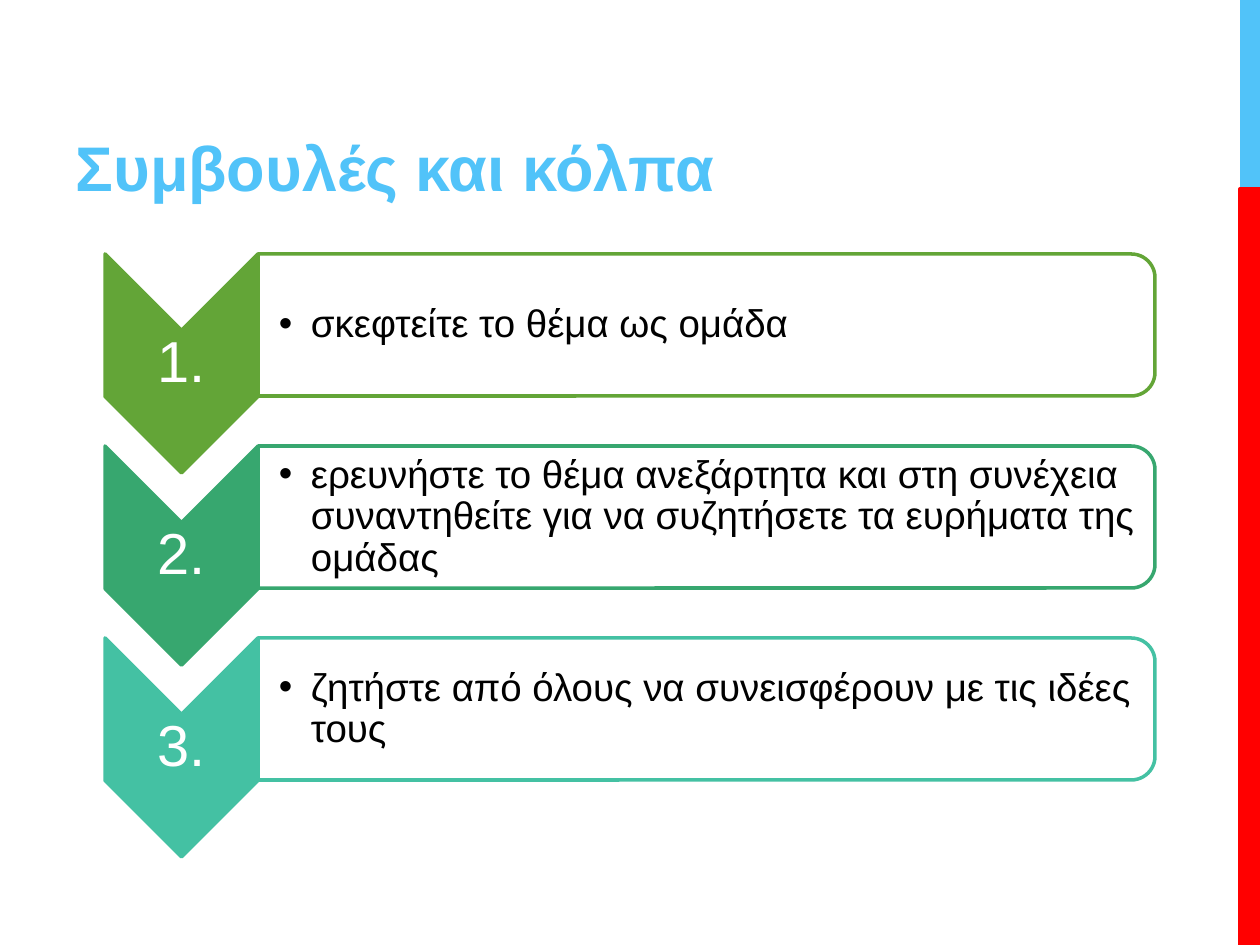
"""Build the slide with three numbered tips as chevrons beside rounded panels."""
from dataclasses import dataclass

from lxml.etree import SubElement
from pptx import Presentation
from pptx.dml.color import RGBColor
from pptx.enum.shapes import MSO_SHAPE
from pptx.enum.text import MSO_ANCHOR, MSO_AUTO_SIZE, PP_ALIGN
from pptx.oxml.ns import qn
from pptx.util import Pt

TITLE = "Συμβουλές και κόλπα"
TIPS = [
    ("1.", "σκεφτείτε το θέμα ως ομάδα", "63A537"),
    ("2.", "ερευνήστε το θέμα ανεξάρτητα και στη συνέχεια συναντηθείτε "
           "για να συζητήσετε τα ευρήματα της ομάδας", "37A76F"),
    ("3.", "ζητήστε από όλους να συνεισφέρουν με τις ιδέες τους", "44C1A3"),
]


@dataclass(frozen=True)
class Theme:
    font: str = "Arial"
    accent: str = "51C3F9"
    band: str = "FF0000"
    light: str = "FFFFFF"
    dark: str = "000000"
    title_size: int = 36
    number_size: int = 33
    tip_size: int = 22
    outline: float = 2
    band_outline: float = 2.25


THEME = Theme()
SLIDE_W, SLIDE_H = 1260, 945
BAND_X, BAND_SPLIT = 1240, 189
TITLE_BOX = (63, 21, 885, 189)
FIRST_TOP, PITCH = 254, 192
CHEVRON_X, CHEVRON_W, CHEVRON_H = 105, 153, 219
PANEL_X, PANEL_W, PANEL_H = 258, 897, 142
NUMBER_DROP, NUMBER_H = 77, 66
TIP_DROP, TIP_W, TIP_H = 7, 890, 129
INSET, TIP_INSET, BULLET_INDENT = 3, 21, 32


def px(length):
    return round(length * 914400 / 126)


def add_block(slide, kind, box, fill, line=None, width=THEME.outline, turned=False):
    x, y, w, h = box
    if turned:
        x, y, w, h = x + (w - h) / 2, y + (h - w) / 2, h, w
    block = slide.shapes.add_shape(kind, px(x), px(y), px(w), px(h))
    block.shadow.inherit = False
    block.rotation = 90 if turned else 0
    block.fill.solid()
    block.fill.fore_color.rgb = RGBColor.from_string(fill)
    if line:
        block.line.color.rgb = RGBColor.from_string(line)
        block.line.width = Pt(width)
    else:
        block.line.fill.background()
    return block


def style(paragraph, size, color, bold=False):
    font = paragraph.font if not paragraph.runs else paragraph.runs[0].font
    font.name, font.size, font.bold = THEME.font, Pt(size), bold
    font.color.rgb = RGBColor.from_string(color)


def add_label(slide, box, text, size, color, left_inset=INSET):
    frame = slide.shapes.add_textbox(*map(px, box)).text_frame
    frame.word_wrap = True
    frame.vertical_anchor = MSO_ANCHOR.MIDDLE
    frame.margin_left = px(left_inset)
    frame.margin_right = frame.margin_top = frame.margin_bottom = px(INSET)
    frame.text = text
    label = frame.paragraphs[0]
    label.line_spacing = 0.9
    style(label, size, color)
    return label


def add_bullet(paragraph):
    properties = paragraph._p.get_or_add_pPr()
    properties.set("marL", str(px(BULLET_INDENT)))
    properties.set("indent", str(-px(BULLET_INDENT)))
    bullet_color = SubElement(properties, qn("a:buClr"))
    SubElement(bullet_color, qn("a:srgbClr"), val=THEME.dark)
    SubElement(properties, qn("a:buFont"), typeface=THEME.font)
    SubElement(properties, qn("a:buChar"), char="•")


def add_title(slide):
    title = slide.shapes.title
    title.left, title.top, title.width, title.height = map(px, TITLE_BOX)
    frame = title.text_frame
    frame.text = TITLE
    frame.auto_size = MSO_AUTO_SIZE.NONE
    frame.vertical_anchor = MSO_ANCHOR.BOTTOM
    heading = frame.paragraphs[0]
    heading.alignment = PP_ALIGN.LEFT
    style(heading, THEME.title_size, THEME.accent, bold=True)


def add_tip(slide, top, number, tip, color):
    add_block(slide, MSO_SHAPE.CHEVRON, (CHEVRON_X, top, CHEVRON_W, CHEVRON_H),
              color, color, turned=True)
    number_label = add_label(
        slide, (CHEVRON_X, top + NUMBER_DROP, CHEVRON_W, NUMBER_H),
        number, THEME.number_size, THEME.light)
    number_label.alignment = PP_ALIGN.CENTER
    panel = add_block(slide, MSO_SHAPE.ROUND_2_SAME_RECTANGLE,
                      (PANEL_X, top, PANEL_W, PANEL_H),
                      THEME.light, color, turned=True)
    panel_color = panel._element.spPr.find(qn("a:solidFill"))[0]
    SubElement(panel_color, qn("a:alpha"), val="90000")
    tip_label = add_label(slide, (PANEL_X, top + TIP_DROP, TIP_W, TIP_H),
                          tip, THEME.tip_size, THEME.dark, TIP_INSET)
    tip_label.level = 1
    add_bullet(tip_label)


def main():
    deck = Presentation()
    deck.slide_width, deck.slide_height = px(SLIDE_W), px(SLIDE_H)
    slide = deck.slides.add_slide(deck.slide_layouts[5])
    band_w = SLIDE_W - BAND_X
    add_block(slide, MSO_SHAPE.RECTANGLE, (BAND_X, 0, band_w, BAND_SPLIT), THEME.accent)
    add_block(slide, MSO_SHAPE.RECTANGLE,
              (BAND_X, BAND_SPLIT, band_w, SLIDE_H - BAND_SPLIT),
              THEME.band, THEME.band, THEME.band_outline)
    add_title(slide)
    for row, (number, tip, color) in enumerate(TIPS):
        add_tip(slide, FIRST_TOP + row * PITCH, number, tip, color)
    deck.save("out.pptx")


if __name__ == "__main__":
    main()
